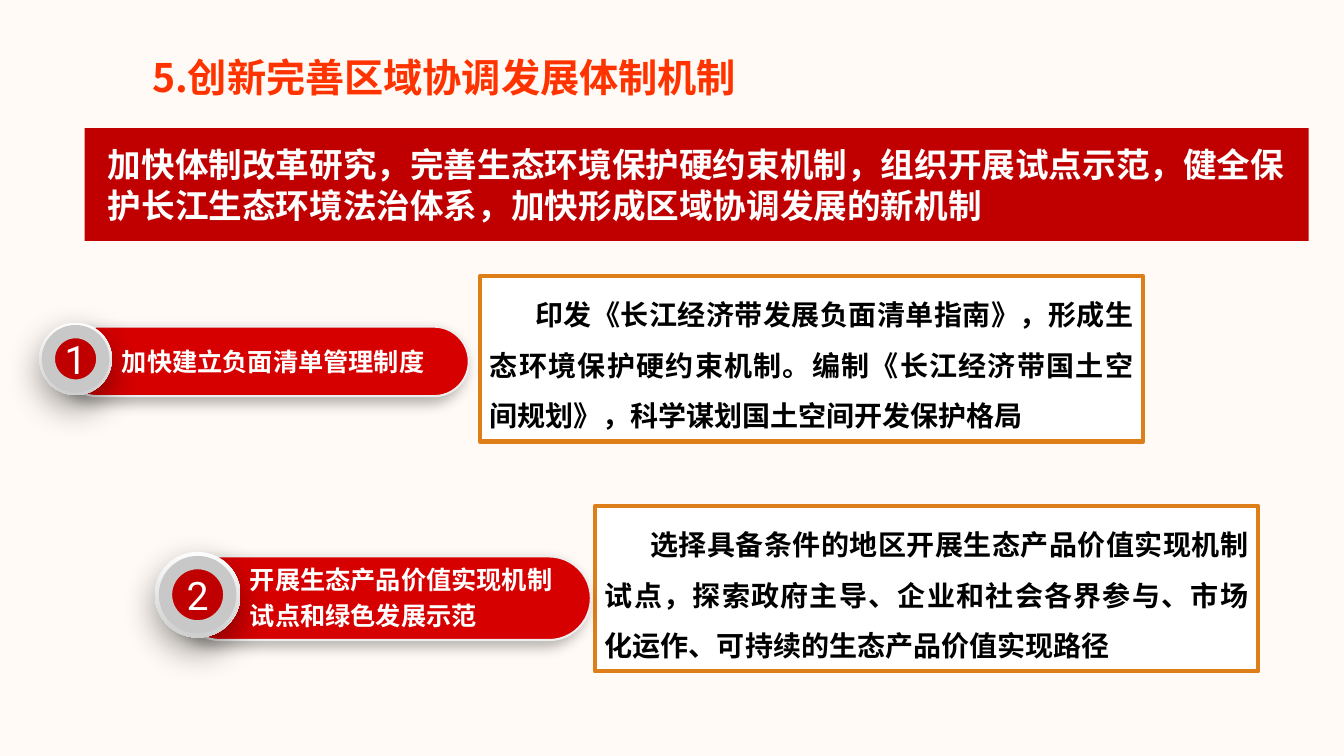
from dataclasses import dataclass
from lxml import etree
from pptx import Presentation
from pptx.dml.color import RGBColor
from pptx.enum.shapes import MSO_SHAPE
from pptx.enum.text import MSO_ANCHOR, PP_ALIGN
from pptx.oxml.ns import qn
from pptx.util import Inches, Pt

RECT, PILL, DISC = MSO_SHAPE.RECTANGLE, MSO_SHAPE.ROUNDED_RECTANGLE, MSO_SHAPE.OVAL
TOP, MIDDLE = MSO_ANCHOR.TOP, MSO_ANCHOR.MIDDLE
LEFT, CENTER, JUSTIFY = PP_ALIGN.LEFT, PP_ALIGN.CENTER, PP_ALIGN.JUSTIFY


@dataclass(frozen=True)
class Theme:
    page: str = "FFFAF5"
    title: str = "FF3300"
    banner: str = "C00000"
    pill: str = "D70000"
    pill_edge: str = "EEEEEE"
    frame: str = "DE7E18"
    ring: str = "C8C8C8"
    rim_light: str = "FCFCFC"
    rim_dark: str = "CFCFCF"
    white: str = "FFFFFF"
    black: str = "000000"
    font: str = "Noto Sans CJK SC"
    number_font: str = "Roboto"
    title_size: int = 28
    banner_size: int = 24
    detail_size: int = 20
    label_size: int = 18
    cell: float = 0.1  # grid cell in inches


THEME = Theme()


def write(shape, text, *, size, color, font=THEME.font, bold=True, align=LEFT,
          anchor=MIDDLE, spacing=1.0, indent=0, insets=(0.1, 0.05, 0.1, 0.05), wrap=True):
    """Fill a shape with one formatted paragraph; indent and insets in inches."""
    frame = shape.text_frame
    frame.word_wrap = wrap
    frame.vertical_anchor = anchor
    (frame.margin_left, frame.margin_top,
     frame.margin_right, frame.margin_bottom) = map(Inches, insets)
    para = frame.paragraphs[0]
    para.alignment = align
    para.line_spacing = spacing
    if indent:
        para._p.get_or_add_pPr().set("indent", str(Inches(indent)))
    span = para.add_run()
    span.text = text
    span.font.size = Pt(size)
    span.font.bold = bold
    span.font.color.rgb = RGBColor.from_string(color)
    span.font.name = font
    east_asian = etree.SubElement(span._r.get_or_add_rPr(), qn("a:ea"))
    east_asian.set("typeface", font)


class Page:
    def __init__(self, deck, theme):
        self.theme = theme
        self.slide = deck.slides.add_slide(deck.slide_layouts[6])
        background = self.slide.background.fill
        background.solid()
        background.fore_color.rgb = RGBColor.from_string(theme.page)

    def place(self, *cells):
        """Turn grid columns and rows into lengths."""
        return [Inches(cell * self.theme.cell) for cell in cells]

    def text_box(self, area, text, **style):
        box = self.slide.shapes.add_textbox(*self.place(*area))
        write(box, text, **style)

    def shape(self, kind, area, fill, line=None, shadow=None, parent=None):
        shapes = (parent or self.slide).shapes
        box = shapes.add_shape(kind, *self.place(*area))
        box.shadow.inherit = False
        if isinstance(fill, tuple):
            box.fill.gradient()
            box.fill.gradient_angle = 270
            for stop, color, position in zip(box.fill.gradient_stops, fill, (0, 1)):
                stop.color.rgb = RGBColor.from_string(color)
                stop.position = position
        else:
            box.fill.solid()
            box.fill.fore_color.rgb = RGBColor.from_string(fill)
        if line:
            color, width = line
            box.line.color.rgb = RGBColor.from_string(color)
            box.line.width = Pt(width)
        else:
            box.line.fill.background()
        if shadow:
            self.cast_shadow(box, *shadow)
        return box

    def cast_shadow(self, box, opacity, blur, distance, angle):
        effects = box._element.spPr.find(qn("a:effectLst"))
        outer = etree.SubElement(
            effects, qn("a:outerShdw"), blurRad=str(Pt(blur)), dist=str(Pt(distance)),
            dir=str(angle * 60000), algn="ctr", rotWithShape="0")
        color = etree.SubElement(outer, qn("a:srgbClr"), val=self.theme.black)
        etree.SubElement(color, qn("a:alpha"), val=str(opacity * 1000))

    def banner(self, area, text):
        box = self.shape(RECT, area, self.theme.banner)
        write(box, text, size=self.theme.banner_size, color=self.theme.white,
              insets=(0.23, 0.05, 0.1, 0.05))

    def detail(self, left, top, text):
        box = self.shape(RECT, (left, top, 65.8, 16.4), self.theme.white,
                         line=(self.theme.frame, 3))
        write(box, text, size=self.theme.detail_size, color=self.theme.black,
              align=JUSTIFY, anchor=TOP, spacing=1.5, indent=0.45)

    def pill(self, area):
        box = self.shape(PILL, area, self.theme.pill, line=(self.theme.pill_edge, 1.5),
                         shadow=(30, 10, 5, 135))
        box.adjustments[0] = 0.5

    def badge(self, center_x, center_y, size, number):
        theme = self.theme
        group = self.slide.shapes.add_group_shape()

        def disc(diameter, fill, **look):
            area = (center_x - diameter / 2, center_y - diameter / 2, diameter, diameter)
            return self.shape(DISC, area, fill, parent=group, **look)

        disc(size, (theme.rim_light, theme.rim_dark), shadow=(40, 25, 9, 90))
        core = disc(size * 0.75, theme.banner, line=(theme.ring, 9.5))
        write(core, number, size=theme.title_size, color=theme.white, bold=False,
              font=theme.number_font, align=CENTER, insets=(0, 0, 0, 0), wrap=False)

    def measure(self, number, item):
        """One numbered measure: detail, pill, badge and label."""
        center_x, center_y, size = item["badge"]
        label_left, label_width = item["label_span"]
        self.detail(*item["detail_at"], item["detail"])
        self.pill(item["pill"])
        self.badge(center_x, center_y, size, str(number))
        self.text_box((label_left, center_y - 2.6, label_width, 5.2), item["label"],
                      size=self.theme.label_size, color=self.theme.white, spacing=1.2)


# Areas are in grid cells: left, top, width, height
MEASURES = [
    dict(detail_at=(47.6, 27.4), pill=(6.2, 32.4, 40.3, 6.9), badge=(7.5, 35.6, 7.2),
         label_span=(11.1, 34.2), label="加快建立负面清单管理制度",
         detail="印发《长江经济带发展负面清单指南》，形成生态环境保护硬约束机制。"
                "编制《长江经济带国土空间规划》，科学谋划国土空间开发保护格局"),
    dict(detail_at=(59, 50.2), pill=(17.7, 55.2, 40.9, 8.3), badge=(19.6, 59, 8.5),
         label_span=(23.8, 32.6), label="开展生态产品价值实现机制试点和绿色发展示范",
         detail="选择具备条件的地区开展生态产品价值实现机制试点，探索政府主导、"
                "企业和社会各界参与、市场化运作、可持续的生态产品价值实现路径"),
]


def main():
    deck = Presentation()
    deck.slide_width, deck.slide_height = Inches(13.33), Inches(7.5)
    page = Page(deck, THEME)

    # Heading and summary
    page.text_box((14.1, 2.9, 75.9, 7.2), "5.创新完善区域协调发展体制机制",
                  size=THEME.title_size, color=THEME.title, spacing=1.5)
    page.banner((8.4, 12.7, 121.4, 11.2),
                "加快体制改革研究，完善生态环境保护硬约束机制，组织开展试点示范，"
                "健全保护长江生态环境法治体系，加快形成区域协调发展的新机制")

    # Numbered measures
    for number, item in enumerate(MEASURES, start=1):
        page.measure(number, item)

    deck.save("out.pptx")


if __name__ == "__main__":
    main()
